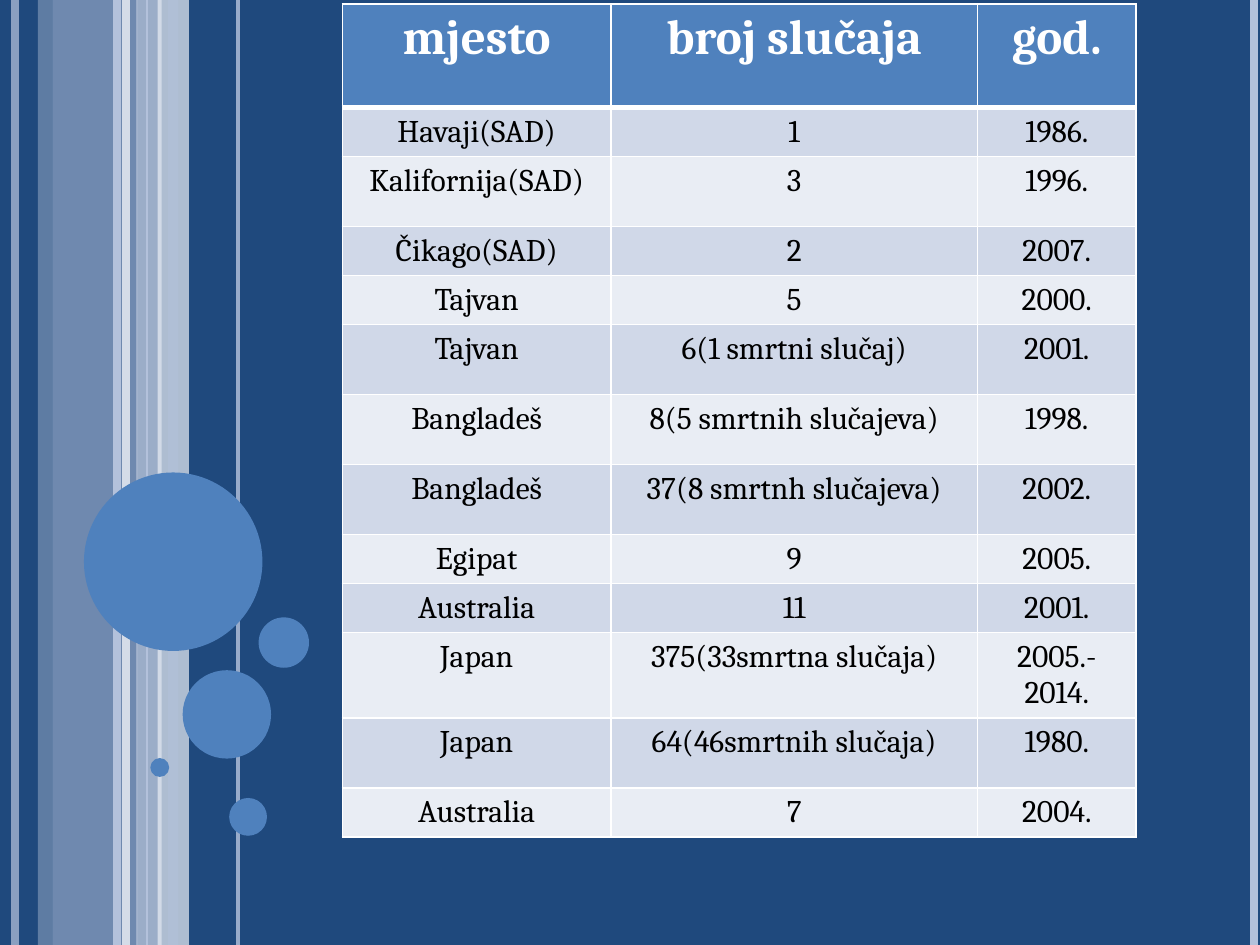
"""Build a slide with a table of case counts by place and year."""
from typing import NamedTuple

from lxml.etree import SubElement
from pptx import Presentation
from pptx.dml.color import RGBColor
from pptx.enum.shapes import MSO_CONNECTOR, MSO_SHAPE
from pptx.enum.text import PP_ALIGN
from pptx.oxml.ns import qn
from pptx.util import Pt

COLORS = {
    "background": "1F497D",
    "accent": "4F81BD",
    "stripe": "B3C1DB",
    "light": "D0D8E8",
    "pale": "E9EDF4",
    "white": "FFFFFF",
    "black": "000000",
}
PAGE_WIDTH, PAGE_HEIGHT = 720, 540
FONT = "Cambria"
TABLE_LEFT, TABLE_TOP = 195.7, 2.4
COLUMN_WIDTHS = [153.4, 209.5, 90.7]
HEADER_HEIGHT, SHORT_ROW, TALL_ROW = 59, 23, 40


class Band(NamedTuple):
    left: float
    width: float
    color: str
    alpha: int


class Stripe(NamedTuple):
    x: float
    weight: float
    color: str = "stripe"
    alpha: int = 100


class Bubble(NamedTuple):
    left: float
    top: float
    size: float


class Case(NamedTuple):
    place: str
    count: str
    year: str
    height: float = SHORT_ROW


BACKDROP = [
    Band(30, 48.5, "stripe", 54),
    Band(21.6, 8.4, "light", 36),
    Band(78, 14.4, "light", 70),
    Band(90, 18, "pale", 71),
    Stripe(8.6, 4.5, alpha=73),
    Stripe(72, 4.5, "pale", 83),
    Stripe(67, 4.5),
    Stripe(136, 2.25, alpha=82),
    Stripe(84, 0.75),
    Band(96, 6, "stripe", 51),
    Bubble(48, 270, 102),
    Bubble(104.4, 383, 50.5),
    Bubble(85.9, 433.2, 10.8),
    Bubble(131, 456, 21.6),
    Bubble(147.8, 352.8, 28.8),
    Stripe(716.4, 4.5),
]
HEADINGS = ["mjesto", "broj slučaja", "god."]
CASES = [
    Case("Havaji(SAD)", "1", "1986."),
    Case("Kalifornija(SAD)", "3", "1996.", TALL_ROW),
    Case("Čikago(SAD)", "2", "2007."),
    Case("Tajvan", "5", "2000."),
    Case("Tajvan", "6(1 smrtni slučaj)", "2001.", TALL_ROW),
    Case("Bangladeš", "8(5 smrtnih slučajeva)", "1998.", TALL_ROW),
    Case("Bangladeš", "37(8 smrtnh slučajeva)", "2002.", TALL_ROW),
    Case("Egipat", "9", "2005."),
    Case("Australia", "11", "2001."),
    Case("Japan", "375(33smrtna slučaja)", "2005.-2014.", TALL_ROW),
    Case("Japan", "64(46smrtnih slučaja)", "1980.", TALL_ROW),
    Case("Australia", "7", "2004."),
]


def rgb(name: str) -> RGBColor:
    return RGBColor.from_string(COLORS[name])


def set_alpha(item, percent: int) -> None:
    if percent < 100:
        for color in item.element.spPr.iter(qn("a:srgbClr")):
            SubElement(color, qn("a:alpha"), val=str(percent * 1000))


def add_filled(page, kind, left: float, top: float, width: float, height: float, color: str):
    shape = page.shapes.add_shape(kind, Pt(left), Pt(top), Pt(width), Pt(height))
    shape.shadow.inherit = False
    shape.fill.solid()
    shape.fill.fore_color.rgb = rgb(color)
    shape.line.fill.background()
    return shape


def add_band(page, band: Band) -> None:
    shape = add_filled(page, MSO_SHAPE.RECTANGLE, band.left, 0, band.width, PAGE_HEIGHT, band.color)
    set_alpha(shape, band.alpha)


def add_bubble(page, bubble: Bubble) -> None:
    add_filled(page, MSO_SHAPE.OVAL, bubble.left, bubble.top, bubble.size, bubble.size, "accent")


def add_stripe(page, stripe: Stripe) -> None:
    line = page.shapes.add_connector(
        MSO_CONNECTOR.STRAIGHT, Pt(stripe.x), Pt(0), Pt(stripe.x), Pt(PAGE_HEIGHT)
    )
    line.line.width = Pt(stripe.weight)
    line.line.color.rgb = rgb(stripe.color)
    set_alpha(line, stripe.alpha)
    SubElement(line.element.spPr, qn("a:effectLst"))


def add_borders(cell, top: float, bottom: float) -> None:
    properties = cell._tc.get_or_add_tcPr()
    for side, weight in {"L": 1, "R": 1, "T": top, "B": bottom}.items():
        border = SubElement(properties, qn(f"a:ln{side}"), w=str(Pt(weight)))
        fill = SubElement(border, qn("a:solidFill"))
        SubElement(fill, qn("a:srgbClr"), val=COLORS["white"])


def fill_cell(cell, text: str, row: int) -> None:
    header = row == 0
    add_borders(cell, top=3 if row == 1 else 1, bottom=3 if header else 1)
    cell.fill.solid()
    cell.fill.fore_color.rgb = rgb("accent" if header else "light" if row % 2 else "pale")
    cell.text = text
    para = cell.text_frame.paragraphs[0]
    para.alignment = PP_ALIGN.CENTER
    para.font.name = FONT
    para.font.size = Pt(28 if header else 18)
    para.font.bold = header
    para.font.color.rgb = rgb("white" if header else "black")


def add_case_table(page) -> None:
    heights = [HEADER_HEIGHT] + [case.height for case in CASES]
    table = page.shapes.add_table(
        len(heights), len(HEADINGS), Pt(TABLE_LEFT), Pt(TABLE_TOP),
        Pt(sum(COLUMN_WIDTHS)), Pt(sum(heights)),
    ).table
    for column, width in zip(table.columns, COLUMN_WIDTHS):
        column.width = Pt(width)
    for row, height in zip(table.rows, heights):
        row.height = Pt(height)
    for row, texts in enumerate([HEADINGS] + [case[:3] for case in CASES]):
        for column, text in enumerate(texts):
            fill_cell(table.cell(row, column), text, row)


def main() -> None:
    deck = Presentation()
    deck.slide_width, deck.slide_height = Pt(PAGE_WIDTH), Pt(PAGE_HEIGHT)
    page = deck.slides.add_slide(deck.slide_layouts[6])
    page.background.fill.solid()
    page.background.fill.fore_color.rgb = rgb("background")
    painters = {Band: add_band, Stripe: add_stripe, Bubble: add_bubble}
    for item in BACKDROP:
        painters[type(item)](page, item)
    add_case_table(page)
    deck.save("out.pptx")


if __name__ == "__main__":
    main()
